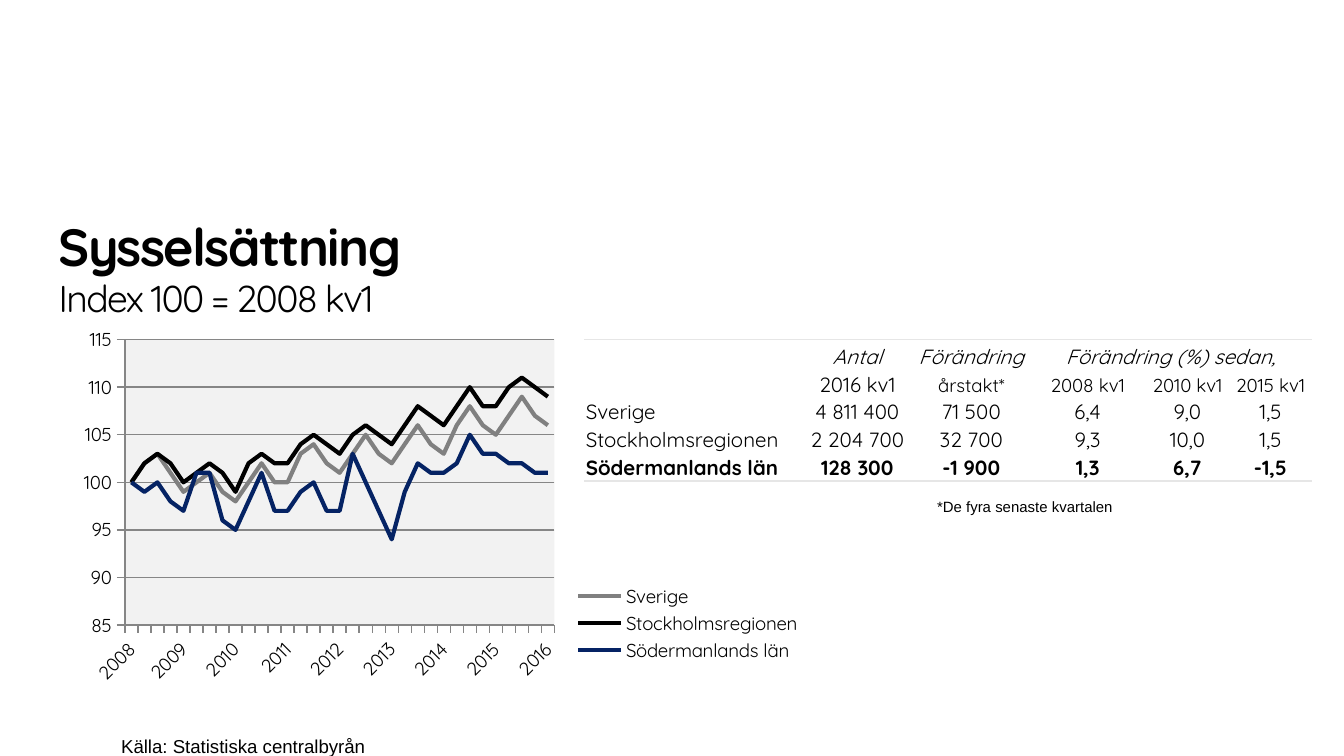
from lxml import etree
from pptx import Presentation
from pptx import util as u
from pptx.chart.data import CategoryChartData
from pptx.dml.color import RGBColor
from pptx.enum import chart as charts, text
from pptx.oxml import parse_xml
from pptx.oxml.ns import nsdecls, qn

HEADING_FONT, NOTE_FONT = "Quicksand", "Arial"
BLACK, RULE, GRID, PLOT = "000000", "E6E6E6", "868686", "F2F2F2"
PLAIN_TABLE_STYLE = "{2D5ABB26-0587-4C30-8999-92F81FD0307C}"

SERIES = [
    ("Sverige", "808080",
     [100, 102, 103, 101, 99, 100, 101, 99, 98, 100, 102, 100, 100, 103, 104, 102, 101,
      103, 105, 103, 102, 104, 106, 104, 103, 106, 108, 106, 105, 107, 109, 107, 106]),
    ("Stockholmsregionen", "000000",
     [100, 102, 103, 102, 100, 101, 102, 101, 99, 102, 103, 102, 102, 104, 105, 104, 103,
      105, 106, 105, 104, 106, 108, 107, 106, 108, 110, 108, 108, 110, 111, 110, 109]),
    ("Södermanlands län", "052364",
     [100, 99, 100, 98, 97, 101, 101, 96, 95, 98, 101, 97, 97, 99, 100, 97, 97,
      103, 100, 97, 94, 99, 102, 101, 101, 102, 105, 103, 103, 102, 102, 101, 101]),
]
TABLE = [
    ["", "Antal", "Förändring", "Förändring (%) sedan,", "", ""],
    ["", "2016 kv1", "årstakt*", "2008 kv1", "2010 kv1", "2015 kv1"],
    ["Sverige", "4 811 400", "71 500", "6,4", "9,0", "1,5"],
    ["Stockholmsregionen", "2 204 700", "32 700", "9,3", "10,0", "1,5"],
    ["Södermanlands län", "128 300", "-1 900", "1,3", "6,7", "-1,5"],
]
COLUMN_WIDTHS = [4.11, 2.11, 2.2, 2.2, 1.57, 1.57]
ROW_HEIGHTS = [0.56, 0.53, 0.52, 0.53, 0.53]


def color(value):
    return RGBColor.from_string(value)


def style_font(font, size, name=HEADING_FONT, bold=False, italic=False):
    font.name, font.size, font.bold, font.italic = name, u.Pt(size), bold, italic
    font.color.rgb = color(BLACK)


def add_textbox(slide, left, top, width, height):
    frame = slide.shapes.add_textbox(u.Cm(left), u.Cm(top), u.Cm(width), u.Cm(height)).text_frame
    frame.margin_left = frame.margin_right = frame.margin_top = frame.margin_bottom = 0
    frame.word_wrap = True
    return frame


def add_heading(slide, left, top, width, height):
    frame = add_textbox(slide, left, top, width, height)
    frame.vertical_anchor = text.MSO_ANCHOR.BOTTOM
    frame.text = "Sysselsättning\nIndex 100 = 2008 kv1"
    for paragraph, size, bold, spacing in zip(frame.paragraphs, (28, 20), (True, False), (0.9, 0.96)):
        paragraph.line_spacing = spacing
        run = paragraph.runs[0]
        style_font(run.font, size, bold=bold)
        run.font._element.set("spc", "-90")


def add_note(slide, left, top, width, height, note, size):
    frame = add_textbox(slide, left, top, width, height)
    frame.text = note
    paragraph = frame.paragraphs[0]
    paragraph.line_spacing = u.Pt(24)
    style_font(paragraph.runs[0].font, size, NOTE_FONT)


def add_cell_rule(cell, side):
    rule = parse_xml(
        f'<a:{side} {nsdecls("a")} w="12700"><a:solidFill><a:srgbClr val="{RULE}"/>'
        f'</a:solidFill></a:{side}>')
    cell._tc.get_or_add_tcPr().insert(0, rule)


def add_employment_table(slide, left, top, width, height):
    table = slide.shapes.add_table(len(TABLE), len(TABLE[0]), u.Cm(left), u.Cm(top),
                                   u.Cm(width), u.Cm(height)).table
    table.first_row = table.horz_banding = False
    table._tbl.tblPr.find(qn("a:tableStyleId")).text = PLAIN_TABLE_STYLE
    for column, share in zip(table.columns, COLUMN_WIDTHS):
        column.width = u.Cm(width * share / sum(COLUMN_WIDTHS))
    for row, share in zip(table.rows, ROW_HEIGHTS):
        row.height = u.Cm(height * share / sum(ROW_HEIGHTS))

    last = len(TABLE) - 1
    for i, row in enumerate(TABLE):
        for j, value in enumerate(row):
            cell = table.cell(i, j)
            cell.fill.background()
            cell.margin_left = cell.margin_right = cell.margin_top = u.Cm(0.03)
            cell.margin_bottom = 0
            cell.vertical_anchor = text.MSO_ANCHOR.BOTTOM
            cell.text = value
            paragraph = cell.text_frame.paragraphs[0]
            paragraph.alignment = text.PP_ALIGN.CENTER if j else text.PP_ALIGN.LEFT
            for run in paragraph.runs:
                style_font(run.font, 10 if i == 1 and j > 1 else 11, bold=i == last, italic=i == 0)
            if not value:  # keeps empty cells from stretching the row
                etree.SubElement(paragraph._p, qn("a:endParaRPr"), sz="1000")
            if i in (0, last):
                add_cell_rule(cell, "lnB" if i else "lnT")
    table.cell(0, 3).merge(table.cell(0, 5))


def set_layout(element, x, y, w, h, inner=False):
    """Place the plot area or legend by fractions of the chart."""
    for old in element.findall(qn("c:layout")):
        element.remove(old)
    target = '<c:layoutTarget val="inner"/>' if inner else ""
    layout = parse_xml(
        f'<c:layout {nsdecls("c")}><c:manualLayout>{target}'
        '<c:xMode val="edge"/><c:yMode val="edge"/>'
        f'<c:x val="{x}"/><c:y val="{y}"/><c:w val="{w}"/><c:h val="{h}"/>'
        '</c:manualLayout></c:layout>')
    position = element.find(qn("c:legendPos"))
    if position is None:
        element.insert(0, layout)
    else:
        position.addnext(layout)


def add_index_chart(slide, left, top, width, height):
    data = CategoryChartData(number_format="#,##0")
    quarters = len(SERIES[0][2])
    data.categories = ["" if i % 4 else str(2008 + i // 4) for i in range(quarters)]
    for name, _, values in SERIES:
        data.add_series(name, values)
    chart = slide.shapes.add_chart(charts.XL_CHART_TYPE.LINE, u.Cm(left), u.Cm(top),
                                   u.Cm(width), u.Cm(height), data).chart
    chart.has_title = False
    style_font(chart.font, 10)

    # Lines
    chart.plots[0].vary_by_categories = False
    for series, (_, line_color, _) in zip(chart.plots[0].series, SERIES):
        series.smooth = False
        series.marker.style = charts.XL_MARKER_STYLE.NONE
        series.format.line.width = u.Pt(2.25)
        series.format.line.color.rgb = color(line_color)

    # Axes
    value_axis, category_axis = chart.value_axis, chart.category_axis
    value_axis.minimum_scale, value_axis.maximum_scale, value_axis.major_unit = 85, 115, 5
    value_axis.tick_labels.number_format = "#,##0"
    value_axis.tick_labels.number_format_is_linked = False
    for axis in (value_axis, category_axis):
        axis.major_tick_mark = charts.XL_TICK_MARK.OUTSIDE
        axis.format.line.color.rgb = color(GRID)
        style_font(axis.tick_labels.font, 10)
    value_axis.major_gridlines.format.line.color.rgb = color(GRID)
    category_axis._element.find(qn("c:txPr")).find(qn("a:bodyPr")).set("rot", "-2700000")

    # Plot area and legend
    plot_area = chart._chartSpace.chart.plotArea
    set_layout(plot_area, 0.07, 0.05, 0.58, 0.77, inner=True)
    plot_area.append(parse_xml(
        f'<c:spPr {nsdecls("c", "a")}><a:solidFill><a:srgbClr val="{PLOT}"/></a:solidFill></c:spPr>'))
    chart.has_legend = True
    chart.legend.position = charts.XL_LEGEND_POSITION.RIGHT
    chart.legend.include_in_layout = False
    style_font(chart.legend.font, 10)
    set_layout(chart.legend._element, 0.67, 0.7, 0.32, 0.23)


def main():
    presentation = Presentation()
    presentation.slide_width, presentation.slide_height = u.Cm(25.4), u.Cm(14.29)
    slide = presentation.slides.add_slide(presentation.slide_layouts[6])
    add_heading(slide, 1.11, 4.04, 15.77, 2.03)
    add_employment_table(slide, 11.04, 6.42, 13.76, 2.67)
    add_note(slide, 2.29, 13.46, 6, 0.83, "Källa: Statistiska centralbyrån", 10)
    add_note(slide, 17.71, 8.89, 5, 0.85, "*De fyra senaste kvartalen", 8)
    add_index_chart(slide, 1.38, 6.07, 14, 7.01)
    presentation.save("out.pptx")


if __name__ == "__main__":
    main()
